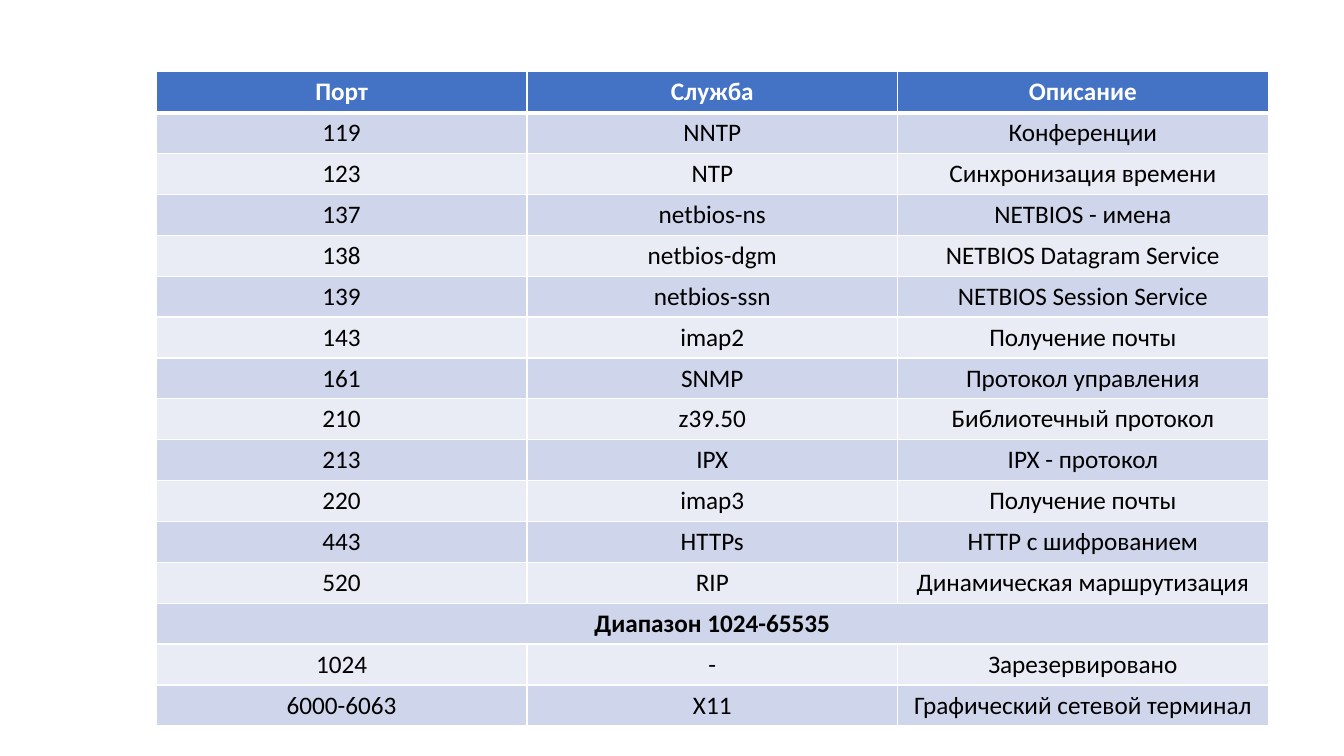
from dataclasses import dataclass

from lxml import etree
from pptx import Presentation
from pptx import util as u
from pptx.dml.color import RGBColor
from pptx.enum import text
from pptx.oxml.ns import qn

# Content: a row with a single item spans the whole table
HEAD = ("Порт", "Служба", "Описание")
PORTS = [
    ("119", "NNTP", "Конференции"),
    ("123", "NTP", "Синхронизация времени"),
    ("137", "netbios-ns", "NETBIOS - имена"),
    ("138", "netbios-dgm", "NETBIOS Datagram Service"),
    ("139", "netbios-ssn", "NETBIOS Session Service"),
    ("143", "imap2", "Получение почты"),
    ("161", "SNMP", "Протокол управления"),
    ("210", "z39.50", "Библиотечный протокол"),
    ("213", "IPX", "IPX - протокол"),
    ("220", "imap3", "Получение почты"),
    ("443", "HTTPs", "HTTP с шифрованием"),
    ("520", "RIP", "Динамическая маршрутизация"),
    ("Диапазон 1024-65535",),
    ("1024", "-", "Зарезервировано"),
    ("6000-6063", "X11", "Графический сетевой терминал"),
]


@dataclass(frozen=True)
class Theme:
    font: str = "Calibri"
    size: int = 18
    ink: str = "000000"
    light: str = "FFFFFF"
    head: str = "4472C4"
    bands: tuple = ("CFD5EA", "E9EBF5")
    thin: int = 1
    thick: int = 3


THEME = Theme()
LEFT, TOP = u.Cm(3.94), u.Cm(1.81)
COL, ROW = u.Cm(9.34), u.Cm(1.03)


def apply(item, form):
    for name, value in form.items():
        setattr(item, name, value)


def edge(cell, side, width, place):
    """Draw one solid border; borders come before the cell's fill."""
    line = etree.Element(qn(f"a:ln{side}"), w=str(u.Pt(width)))
    fill = etree.SubElement(line, qn("a:solidFill"))
    etree.SubElement(fill, qn("a:srgbClr"), val=THEME.light)
    cell._tc.get_or_add_tcPr().insert(place, line)


def style(cell, words, fill, ink, bold, top, bottom):
    cell.vertical_anchor = text.MSO_ANCHOR.MIDDLE
    cell.fill.solid()
    cell.fill.fore_color.rgb = RGBColor.from_string(fill)
    widths = {"L": THEME.thin, "R": THEME.thin, "T": top, "B": bottom}
    for place, (side, width) in enumerate(widths.items()):
        edge(cell, side, width, place)
    if not words:
        return
    para = cell.text_frame.paragraphs[0]
    para.alignment = text.PP_ALIGN.CENTER
    run = para.add_run()
    run.text = words
    apply(run.font, {"name": THEME.font, "size": u.Pt(THEME.size), "bold": bold})
    run.font.color.rgb = RGBColor.from_string(ink)


def main():
    deck = Presentation()
    apply(deck, {"slide_width": u.Cm(33.87), "slide_height": u.Cm(19.05)})
    slide = deck.slides.add_slide(deck.slide_layouts[6])

    # Table grid
    rows = [HEAD, *PORTS]
    wide = len(HEAD)
    grid = slide.shapes.add_table(
        len(rows), wide, LEFT, TOP, COL * wide, ROW * len(rows)).table
    for col in grid.columns:
        col.width = COL
    for row in grid.rows:
        row.height = ROW

    # Header, banded rows and the merged range row
    for r, items in enumerate(rows):
        head, span = r == 0, len(items) == 1
        fill = THEME.head if head else THEME.bands[(r - 1) % 2]
        ink = THEME.light if head else THEME.ink
        top = THEME.thick if r == 1 else THEME.thin
        bottom = THEME.thick if head else THEME.thin
        if span:
            grid.cell(r, 0).merge(grid.cell(r, wide - 1))
        for c in range(wide):
            words = items[c] if c < len(items) else ""
            style(grid.cell(r, c), words, fill, ink, head or span, top, bottom)

    deck.save("out.pptx")


if __name__ == "__main__":
    main()
